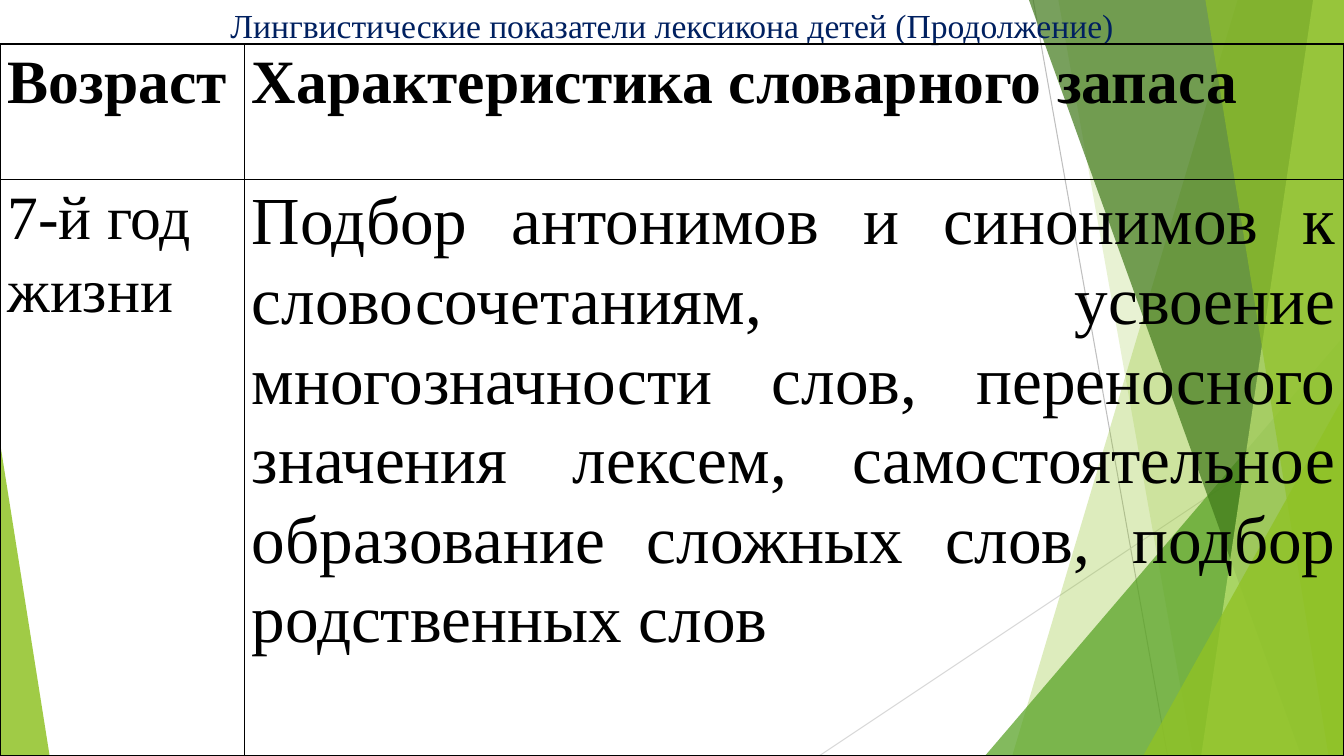
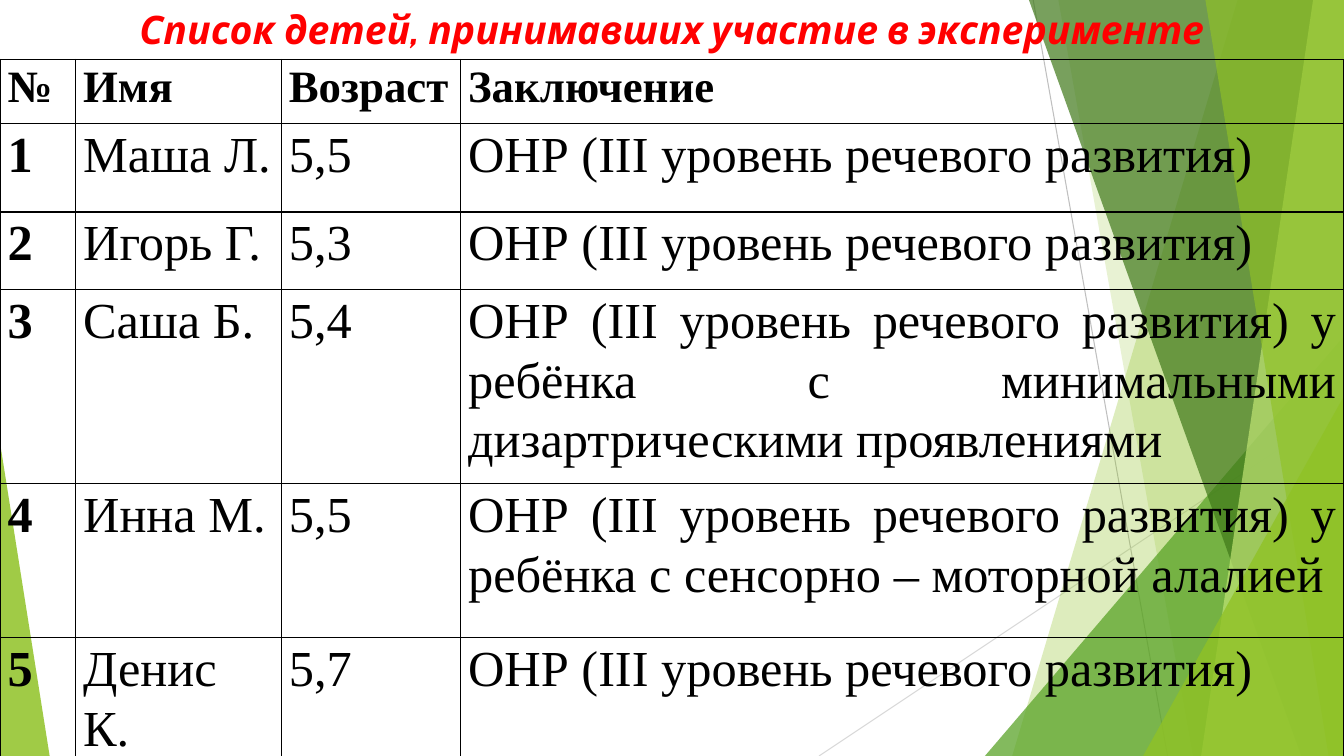
from dataclasses import dataclass

from lxml import etree
from pptx import Presentation
from pptx import util as u
from pptx.dml import color
from pptx.enum import shapes, text
from pptx.oxml import ns

WIDTH, HEIGHT = 960, 540
BODY_FONT = "Times New Roman"
COLORS = {
    "black": "000000",
    "navy": "002060",
    "red": "FF0000",
    "lime": "90C226",
    "pale_lime": "C0E474",
    "green": "54A021",
    "dark_green": "3F7819",
    "gray": "BFBFBF",
    "light_gray": "D9D9D9",
}


@dataclass(frozen=True)
class Ray:
    start: tuple[float, float]
    end: tuple[float, float]
    color: str


@dataclass(frozen=True)
class Band:
    """A full-height band from a slanted left edge to the right of the slide."""
    top_x: float
    bottom_x: float
    color: str
    opacity: int


@dataclass(frozen=True)
class Corner:
    """A right triangle standing on the bottom edge; apex is 0 (left) or 1 (right)."""
    left: float
    top: float
    width: float
    apex: int
    color: str
    opacity: int


@dataclass(frozen=True)
class Title:
    wording: str
    height: float
    size: float
    font: str
    color: str
    emphasis: bool = False


@dataclass(frozen=True)
class Cell:
    wording: str
    size: float
    bold: bool = False
    justified: bool = True


@dataclass(frozen=True)
class Page:
    title: Title
    columns: tuple[float, ...]
    rows: tuple[float, ...]
    cells: list[list[Cell]]


RAYS = (
    Ray((738, 0), (834, HEIGHT), "gray"),
    Ray((WIDTH, 290), (585, HEIGHT), "light_gray"),
)
FACETS = (
    Band(884, 723, "lime", 30),
    Band(756, 852, "lime", 20),
    Corner(703.5, 240, 256.5, 1, "green", 72),
    Band(735, 929.5, "dark_green", 70),
    Band(938, 858, "pale_lime", 70),
    Band(861, 949, "lime", 65),
    Corner(816.5, 283, 143.5, 1, "lime", 80),
    Corner(0, 316, 35.5, 0, "lime", 85),
)

CONCLUSION = "ОНР (III уровень речевого развития)"
CHILDREN = (
    ("Маша Л.", "5,5", CONCLUSION),
    ("Игорь Г.", "5,3", CONCLUSION),
    ("Саша Б.", "5,4",
     f"{CONCLUSION} у ребёнка с минимальными дизартрическими проявлениями"),
    ("Инна М.", "5,5", f"{CONCLUSION} у ребёнка с сенсорно – моторной алалией"),
    ("Денис К.", "5,7", CONCLUSION),
)

VOCABULARY = Page(
    Title("Лингвистические показатели лексикона детей (Продолжение)",
          31.5, 24, BODY_FONT, "navy"),
    (174.5, 785.5),
    (97, 411.5),
    [
        [Cell("Возраст", 44, bold=True),
         Cell("Характеристика словарного запаса", 44, bold=True)],
        [Cell("7-й год жизни", 44, justified=False),
         Cell("Подбор антонимов и синонимов к словосочетаниям, усвоение "
              "многозначности слов, переносного значения лексем, "
              "самостоятельное образование сложных слов, подбор "
              "родственных слов", 48)],
    ],
)
PARTICIPANTS = Page(
    Title("Список детей, принимавших участие в эксперименте",
          42.5, 28, "Cabin", "red", emphasis=True),
    (54, 147, 128, 631),
    (46, 63, 55.5, 134.5, 110, 88.5),
    [[Cell(heading, 32, bold=True)
      for heading in ("№", "Имя", "Возраст", "Заключение")]]
    + [[Cell(str(number), 36, bold=True), *(Cell(value, 36) for value in child)]
       for number, child in enumerate(CHILDREN, 1)],
)


def rgb(name: str) -> color.RGBColor:
    return color.RGBColor.from_string(COLORS[name])


def draw_ray(slide, ray: Ray) -> None:
    connector = slide.shapes.add_connector(
        shapes.MSO_CONNECTOR.STRAIGHT,
        *(u.Pt(value) for value in (*ray.start, *ray.end)))
    connector.line.color.rgb = rgb(ray.color)
    connector.line.width = u.Pt(0.75)
    etree.SubElement(connector.element.spPr, ns.qn("a:effectLst"))


def draw_facet(slide, facet: Band | Corner) -> None:
    if isinstance(facet, Band):
        builder = slide.shapes.build_freeform(u.Pt(facet.top_x), 0)
        builder.add_line_segments([
            (u.Pt(x), u.Pt(y)) for x, y in
            ((WIDTH, 0), (WIDTH, HEIGHT), (facet.bottom_x, HEIGHT))])
        shape = builder.convert_to_shape()
    else:
        shape = slide.shapes.add_shape(
            shapes.MSO_SHAPE.ISOSCELES_TRIANGLE, u.Pt(facet.left),
            u.Pt(facet.top), u.Pt(facet.width), u.Pt(HEIGHT - facet.top))
        shape.adjustments[0] = facet.apex
    shape.shadow.inherit = False
    shape.line.fill.background()
    shape.fill.solid()
    shape.fill.fore_color.rgb = rgb(facet.color)
    fill_color = shape.element.spPr.find(f".//{ns.qn('a:srgbClr')}")
    etree.SubElement(fill_color, ns.qn("a:alpha"), val=str(facet.opacity * 1000))


def add_run(paragraph, wording: str, size: float, font: str, color_name: str,
            bold: bool, italic: bool = False) -> None:
    run = paragraph.add_run()
    run.text = wording
    run.font.size = u.Pt(size)
    run.font.name = font
    run.font.color.rgb = rgb(color_name)
    run.font.bold = bold
    run.font.italic = italic


def draw_title(slide, title: Title) -> None:
    box = slide.shapes.add_textbox(0, 0, u.Pt(WIDTH), u.Pt(title.height))
    box.text_frame.word_wrap = True
    paragraph = box.text_frame.paragraphs[0]
    paragraph.alignment = text.PP_ALIGN.CENTER
    add_run(paragraph, title.wording, title.size, title.font, title.color,
            title.emphasis, title.emphasis)


def add_borders(table_cell) -> None:
    properties = table_cell._tc.get_or_add_tcPr()
    for side in ("lnL", "lnR", "lnT", "lnB"):
        line = etree.SubElement(properties, ns.qn(f"a:{side}"), w=str(u.Pt(1)))
        fill = etree.SubElement(line, ns.qn("a:solidFill"))
        etree.SubElement(fill, ns.qn("a:srgbClr"), val=COLORS["black"])


def fill_cell(table_cell, cell: Cell) -> None:
    add_borders(table_cell)
    table_cell.fill.background()
    table_cell.margin_left = table_cell.margin_right = u.Pt(5.4)
    table_cell.margin_top = table_cell.margin_bottom = 0
    paragraph = table_cell.text_frame.paragraphs[0]
    paragraph.alignment = (
        text.PP_ALIGN.JUSTIFY if cell.justified else text.PP_ALIGN.LEFT)
    paragraph.line_spacing = 1.07
    add_run(paragraph, cell.wording, cell.size, BODY_FONT, "black", cell.bold)


def draw_table(slide, page: Page) -> None:
    table = slide.shapes.add_table(
        len(page.rows), len(page.columns), 0, u.Pt(page.title.height),
        u.Pt(WIDTH), u.Pt(sum(page.rows))).table
    table.first_row = table.horz_banding = False
    for column, width in zip(table.columns, page.columns):
        column.width = u.Pt(width)
    for row, height, cells in zip(table.rows, page.rows, page.cells):
        row.height = u.Pt(height)
        for table_cell, cell in zip(row.cells, cells):
            fill_cell(table_cell, cell)


def main() -> None:
    presentation = Presentation()
    presentation.slide_width = u.Pt(WIDTH)
    presentation.slide_height = u.Pt(HEIGHT)
    for page in (VOCABULARY, PARTICIPANTS):
        slide = presentation.slides.add_slide(presentation.slide_layouts[6])
        for ray in RAYS:
            draw_ray(slide, ray)
        for facet in FACETS:
            draw_facet(slide, facet)
        draw_title(slide, page.title)
        draw_table(slide, page)
    presentation.save("out.pptx")


if __name__ == "__main__":
    main()
